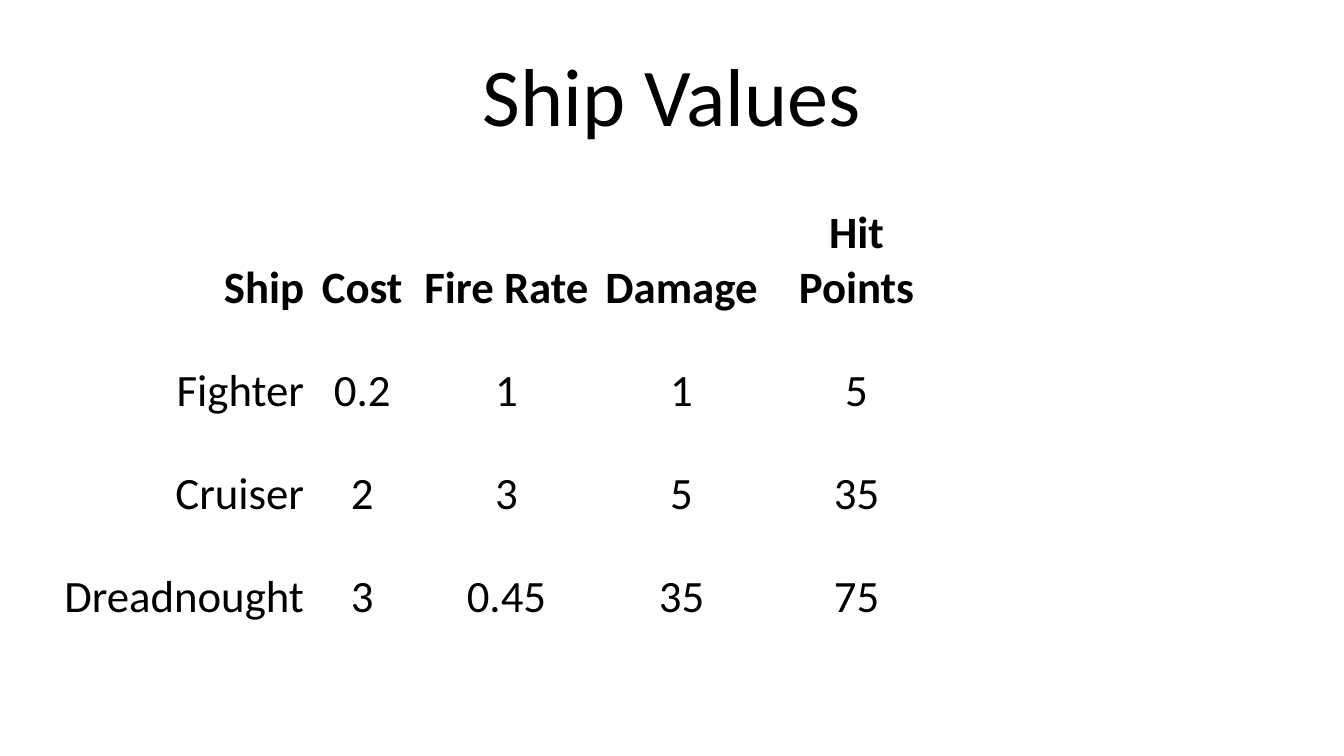
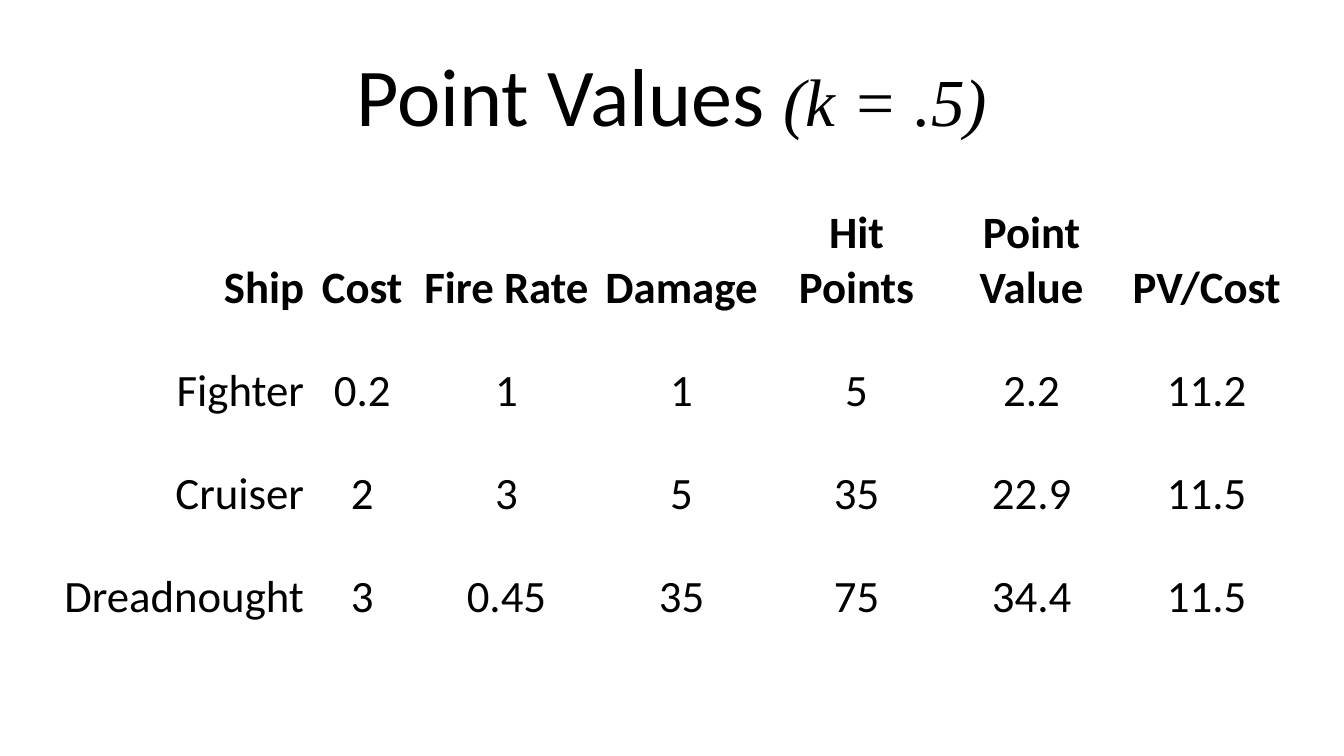
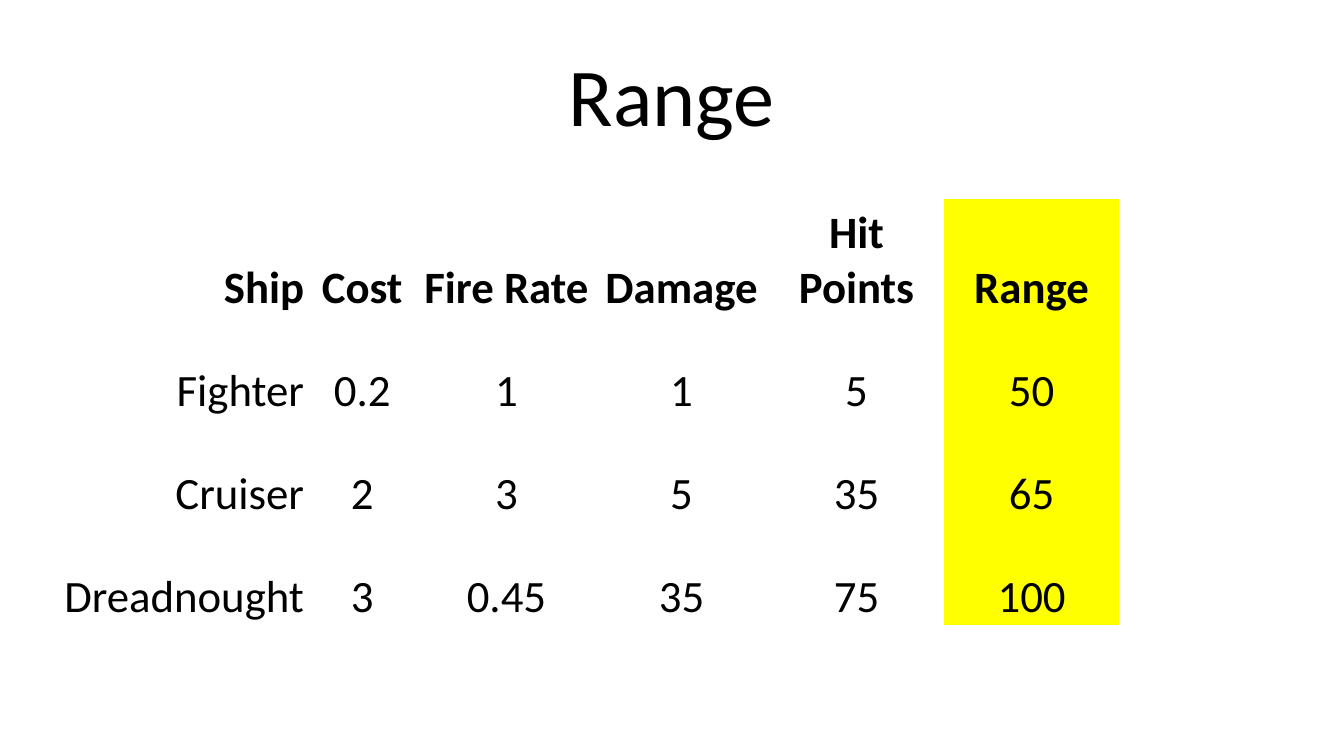
from dataclasses import dataclass

from pptx import Presentation
from pptx.dml.color import RGBColor as RGB
from pptx.enum.text import MSO_ANCHOR as ANCHOR, MSO_AUTO_SIZE as AUTO, PP_ALIGN as ALIGN
from pptx.util import Pt

PX = 2286  # 400 px to the inch


@dataclass(frozen=True)
class Theme:
    ink: RGB = RGB(0x00, 0x00, 0x00)
    paper: RGB = RGB(0xFF, 0xFF, 0xFF)
    highlight: RGB = RGB(0xFF, 0xFF, 0x00)
    font: str = "Calibri"
    formula_font: str = "Times New Roman"
    title_size: int = 44
    formula_size: int = 36
    table_size: int = 24


THEME = Theme()
PLAIN_STYLE = "{2D5ABB26-0587-4C30-8999-92F81FD0307C}"  # no style, no grid

# Slide and table geometry
SLIDE_WIDTH, SLIDE_HEIGHT = 4000, 2250
TITLE_BOX = (200, 90, 3600, 375)
TABLE_LEFT, TABLE_TOP = 140, 593
SHIP_WIDTH, COST_WIDTH, VALUE_WIDTH = 769, 338, 521
HEADER_HEIGHT, ROW_HEIGHT = 345, 307
CELL_MARGIN = 4

# Columns shared by every slide
SHIP_VALUES = [
    ["Ship", "Cost", "Fire Rate", "Damage", "Hit Points"],
    ["Fighter", "0.2", "1", "1", "5"],
    ["Cruiser", "2", "3", "5", "35"],
    ["Dreadnought", "3", "0.45", "35", "75"],
]
POINT_VALUE = ["Point Value", "2.2", "22.9", "34.4"]
PV_PER_COST = ["PV/Cost", "11.2", "11.5", "11.5"]
RANGE = ["Range", "50", "65", "100"]


def px(n):
    return n * PX


def style_run(r, size, font=THEME.font, bold=False, italic=False):
    r.font.size = Pt(size)
    r.font.name = font
    r.font.bold = bold
    r.font.italic = italic
    r.font.color.rgb = THEME.ink


def add_slide(prs, title, formula=None):
    s = prs.slides.add_slide(prs.slide_layouts[5])
    s.background.fill.solid()
    s.background.fill.fore_color.rgb = THEME.paper

    sp = s.shapes.title
    sp.left, sp.top, sp.width, sp.height = map(px, TITLE_BOX)
    tf = sp.text_frame
    tf.text = title
    tf.word_wrap = True
    tf.auto_size = AUTO.NONE
    tf.vertical_anchor = ANCHOR.MIDDLE
    p = tf.paragraphs[0]
    p.alignment = ALIGN.CENTER
    style_run(p.runs[0], THEME.title_size)
    if formula:
        r = p.add_run()
        r.text = formula
        style_run(r, THEME.formula_size, THEME.formula_font, italic=True)
    return s


def fill_cell(cell, text, align, bold, fill):
    cell.margin_left = cell.margin_right = cell.margin_top = px(CELL_MARGIN)
    cell.margin_bottom = 0
    cell.vertical_anchor = ANCHOR.BOTTOM
    if fill is None:
        cell.fill.background()
    else:
        cell.fill.solid()
        cell.fill.fore_color.rgb = fill
    p = cell.text_frame.paragraphs[0]
    p.text = text
    p.alignment = align
    style_run(p.runs[0], THEME.table_size, bold=bold)


def add_ship_table(s, extra_columns=(), extra_fill=None):
    rows = [base + list(extra) for base, *extra in zip(SHIP_VALUES, *extra_columns)]
    shared = len(SHIP_VALUES[0])
    widths = [SHIP_WIDTH, COST_WIDTH] + [VALUE_WIDTH] * (len(rows[0]) - 2)
    heights = [HEADER_HEIGHT] + [ROW_HEIGHT] * (len(rows) - 1)

    frame = s.shapes.add_table(len(rows), len(widths), px(TABLE_LEFT), px(TABLE_TOP),
                               px(sum(widths)), px(sum(heights)))
    table = frame.table
    table.first_row = table.horz_banding = False
    table._tbl.tblPr[0].text = PLAIN_STYLE
    for column, width in zip(table.columns, widths):
        column.width = px(width)
    for row, height in zip(table.rows, heights):
        row.height = px(height)

    for i, values in enumerate(rows):
        for j, text in enumerate(values):
            fill_cell(table.cell(i, j), text,
                      align=ALIGN.RIGHT if j == 0 else ALIGN.CENTER,
                      bold=i == 0,
                      fill=extra_fill if j >= shared else None)


def main():
    prs = Presentation()
    prs.slide_width, prs.slide_height = px(SLIDE_WIDTH), px(SLIDE_HEIGHT)

    # Ship values
    add_ship_table(add_slide(prs, "Ship Values"))

    # Point values
    s = add_slide(prs, "Point Values ", formula="(k = .5)")
    add_ship_table(s, [POINT_VALUE, PV_PER_COST])

    # Range, highlighted
    add_ship_table(add_slide(prs, "Range"), [RANGE], THEME.highlight)

    prs.save("out.pptx")


if __name__ == "__main__":
    main()
